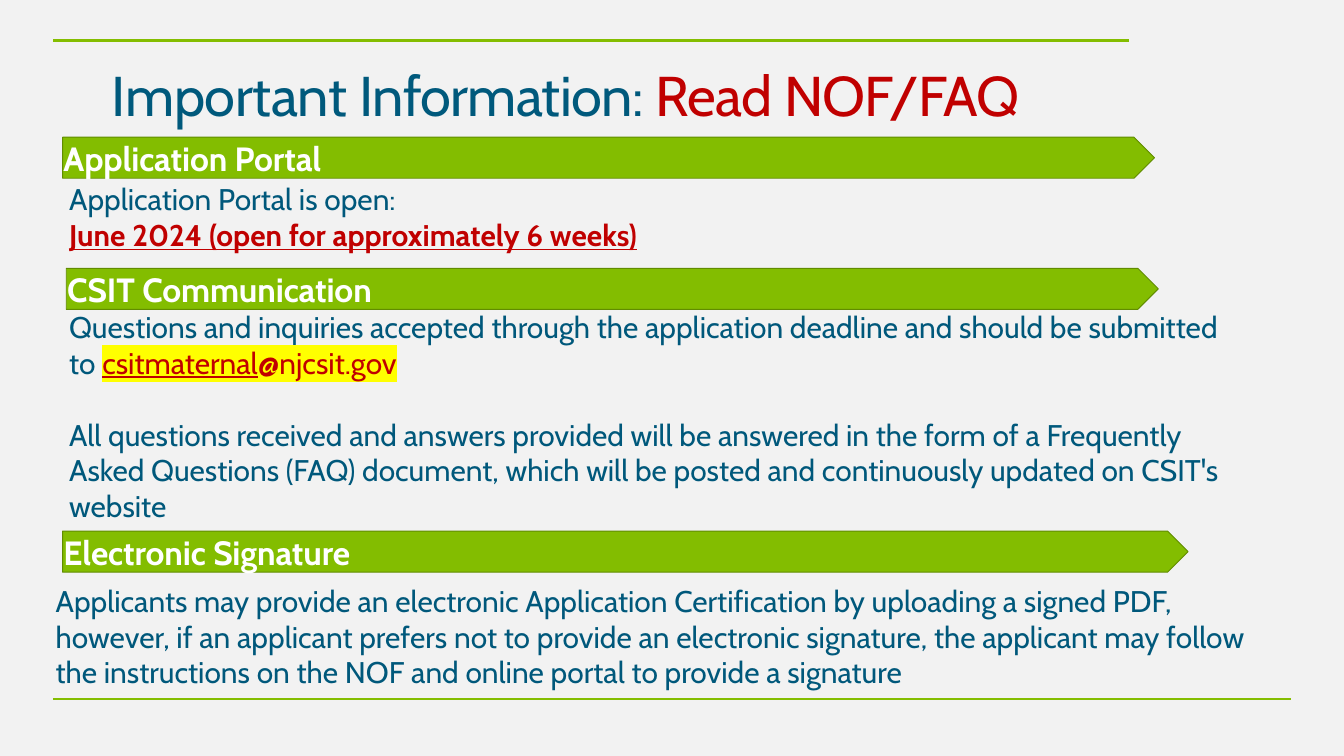
import pptx
import pptx.util
import pptx.dml.color
import pptx.enum.shapes
import pptx.enum.text
import pptx.oxml
import pptx.oxml.ns

Pt = pptx.util.Pt
RGB = pptx.dml.color.RGBColor
MSO_SHAPE = pptx.enum.shapes.MSO_SHAPE
ANCHOR = pptx.enum.text.MSO_ANCHOR
ALIGN = pptx.enum.text.PP_ALIGN
qn = pptx.oxml.ns.qn

FONT = "Cabin"
BACKGROUND = RGB(0xF2, 0xF2, 0xF2)
RULE_GREEN = RGB(0x84, 0xBD, 0x00)
BANNER_GREEN = RGB(0x83, 0xBD, 0x00)
BANNER_EDGE = RGB(0x61, 0x8C, 0x00)
TITLE_BLUE = RGB(0x00, 0x59, 0x7C)
BODY_BLUE = RGB(0x00, 0x58, 0x7B)
RED = RGB(0xC0, 0x00, 0x00)
WHITE = RGB(0xFF, 0xFF, 0xFF)
YELLOW = RGB(0xFF, 0xFF, 0x00)

TITLE_SIZE, BANNER_SIZE, BODY_SIZE = 60, 36, 32
BANNER_HEIGHT = 44
PARAGRAPH_GAP = 38.5

# left, right, y
RULES = [(57, 1210, 43), (57, 1383, 749)]

# A run is its text and whatever differs from the base style of its box.
TITLE_BOX = (119, 64, 1109, 73)
TITLE = [[
    ("Important ", dict(spacing=-40)),
    ("Information: ", dict(spacing=-70)),
    ("Read ", dict(color=RED, spacing=-90)),
    ("NOF/FAQ", dict(color=RED, spacing=-110)),
]]

SECTIONS = [
    dict(heading="Application Portal", banner=(67, 147, 1170),
         body=(67, 190, 1305, 124), gap=0, paragraphs=[
             [("Application Portal is open:", {})],
             [("June 2024 (open for approximately 6 weeks)",
               dict(color=RED, bold=True, underline=True))],
         ]),
    dict(heading="CSIT Communication", banner=(71, 287.5, 1170),
         body=(67, 327, 1269, 240), gap=PARAGRAPH_GAP, paragraphs=[
             [("Questions and inquiries accepted through the application "
               "deadline and should be submitted to ", {}),
              ("csitmaternal", dict(color=RED, underline=True, highlight=YELLOW)),
              ("@njcsit.gov", dict(color=RED, highlight=YELLOW))],
             [("All questions received and answers provided will be answered "
               "in the form of a Frequently Asked Questions (FAQ) document, "
               "which will be posted and continuously updated on CSIT's "
               "website", {})],
         ]),
    dict(heading="Electronic Signature", banner=(67, 569, 1206),
         body=(52.5, 620.5, 1319, 124), gap=0, paragraphs=[
             [("Applicants may provide an electronic Application Certification "
               "by uploading a signed PDF, however, if an applicant prefers "
               "not to provide an electronic signature, the applicant may "
               "follow the instructions on the NOF and online portal to "
               "provide a signature", {})],
         ]),
]


def add_run(p, text, base_color, color=None, bold=None, underline=None,
            spacing=None, highlight=None):
    r = p.add_run()
    r.text = text
    r.font.color.rgb = color or base_color
    r.font.bold = bold
    r.font.underline = underline
    rPr = r._r.get_or_add_rPr()
    if spacing is not None:
        rPr.set("spc", str(spacing))
    if highlight is not None:
        mark = pptx.oxml.parse_xml(
            '<a:highlight xmlns:a="http://schemas.openxmlformats.org/drawingml/2006/main">'
            f'<a:srgbClr val="{highlight}"/></a:highlight>')
        rPr.find(qn("a:solidFill")).addnext(mark)


def fill_text(tf, paragraphs, size, color, gap=0):
    tf.word_wrap = True
    for i, runs in enumerate(paragraphs):
        p = tf.add_paragraph() if i else tf.paragraphs[0]
        p.alignment = ALIGN.LEFT
        if i and gap:
            p.space_before = Pt(gap)
        p.font.name = FONT
        p.font.size = Pt(size)
        for text, style in runs:
            add_run(p, text, color, **style)


def center_without_insets(tf, left=1):
    tf.vertical_anchor = ANCHOR.MIDDLE
    tf.margin_left = Pt(left)
    tf.margin_top = tf.margin_right = tf.margin_bottom = 0


def add_rule(s, left, right, y):
    line = s.shapes.add_connector(pptx.enum.shapes.MSO_CONNECTOR.STRAIGHT,
                                  Pt(left), Pt(y), Pt(right), Pt(y))
    line.line.color.rgb = RULE_GREEN
    line.line.width = Pt(3)
    line._element.spPr.append(pptx.oxml.parse_xml(
        '<a:effectLst xmlns:a="http://schemas.openxmlformats.org/drawingml/2006/main"/>'))


def add_banner(s, heading, left, top, width):
    sp = s.shapes.add_shape(MSO_SHAPE.PENTAGON, Pt(left), Pt(top),
                            Pt(width), Pt(BANNER_HEIGHT))
    sp.shadow.inherit = False
    sp.fill.solid()
    sp.fill.fore_color.rgb = BANNER_GREEN
    sp.line.color.rgb = BANNER_EDGE
    sp.line.width = Pt(1)
    center_without_insets(sp.text_frame)
    fill_text(sp.text_frame, [[(heading, dict(bold=True, spacing=-10))]],
              BANNER_SIZE, WHITE)


def main():
    prs = pptx.Presentation()
    prs.slide_width, prs.slide_height = Pt(1440), Pt(810)
    s = prs.slides.add_slide(prs.slide_layouts[6])
    s.background.fill.solid()
    s.background.fill.fore_color.rgb = BACKGROUND

    for rule in RULES:
        add_rule(s, *rule)

    tf = s.shapes.add_textbox(*map(Pt, TITLE_BOX)).text_frame
    center_without_insets(tf)
    fill_text(tf, TITLE, TITLE_SIZE, TITLE_BLUE)

    for section in SECTIONS:
        add_banner(s, section["heading"], *section["banner"])
        tf = s.shapes.add_textbox(*map(Pt, section["body"])).text_frame
        fill_text(tf, section["paragraphs"], BODY_SIZE, BODY_BLUE, section["gap"])

    prs.save("out.pptx")


if __name__ == "__main__":
    main()
